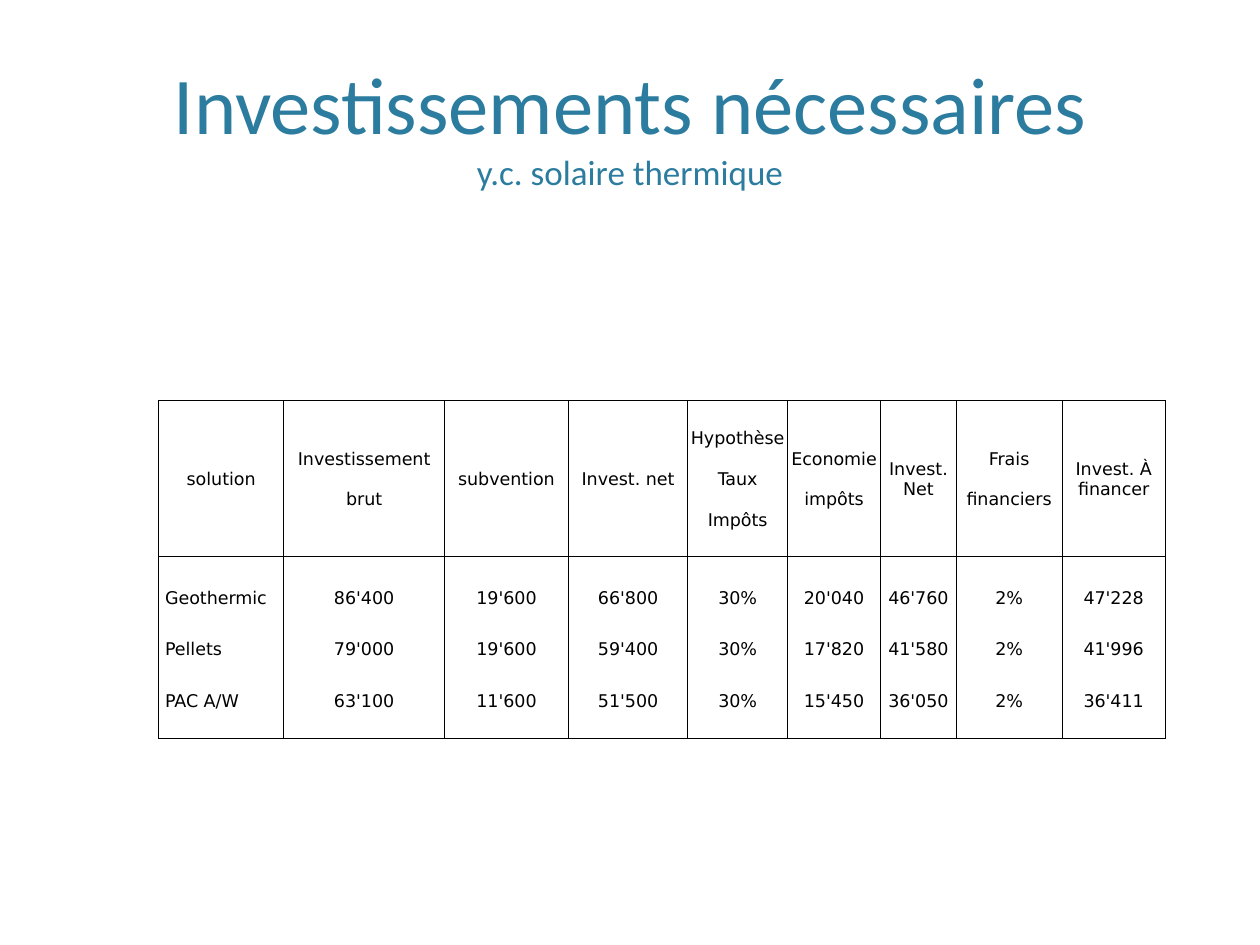
from dataclasses import dataclass

from lxml import etree
from pptx import Presentation
from pptx import util as u
from pptx.dml.color import RGBColor
from pptx.enum import text
from pptx.oxml.ns import qn

INK, TITLE_BLUE = "000000", "2C7C9F"
TABLE_FONT, TITLE_FONT = "DejaVu Sans", "Calibri"
TABLE_SIZE = 10
HEADER_GAP = 11.6  # one line of table text
BORDER_WIDTH = 0.5


@dataclass
class Column:
    width: float
    header: list[str]
    values: list[str]


COLUMNS = [
    Column(0.99, ["solution"], ["Geothermic", "Pellets", "PAC A/W"]),
    Column(1.28, ["Investissement", "brut"], ["86'400", "79'000", "63'100"]),
    Column(0.98, ["subvention"], ["19'600", "19'600", "11'600"]),
    Column(0.95, ["Invest. net"], ["66'800", "59'400", "51'500"]),
    Column(0.79, ["Hypothèse", "Taux", "Impôts"], ["30%"] * 3),
    Column(0.74, ["Economie", "impôts"], ["20'040", "17'820", "15'450"]),
    Column(0.6, ["Invest. Net"], ["46'760", "41'580", "36'050"]),
    Column(0.84, ["Frais", "financiers"], ["2%"] * 3),
    Column(0.82, ["Invest. À financer"], ["47'228", "41'996", "36'411"]),
]
ROW_HEIGHTS = [1.24, 0.41, 0.41, 0.41, 0.21]


def style_font(font, name: str, size: float, color: str) -> None:
    font.name = name
    font.size = u.Pt(size)
    font.color.rgb = RGBColor.from_string(color)


def set_borders(cell, visible: str) -> None:
    """Draw the sides named in visible (letters of LRTB) and clear the others."""
    properties = cell._tc.get_or_add_tcPr()
    for side in "LRTB":
        line = etree.SubElement(properties, qn(f"a:ln{side}"))
        if side in visible:
            line.set("w", str(u.Pt(BORDER_WIDTH)))
            fill = etree.SubElement(line, qn("a:solidFill"))
            etree.SubElement(fill, qn("a:srgbClr"), val=INK)
        else:
            etree.SubElement(line, qn("a:noFill"))


def fill_cell(cell, lines: list[str], align, anchor, left: float) -> None:
    cell.margin_left = u.Inches(left)
    cell.margin_right = cell.margin_top = u.Inches(0.01)
    cell.margin_bottom = 0
    cell.vertical_anchor = anchor
    cell.fill.background()
    frame = cell.text_frame
    for index, line in enumerate(lines):
        para = frame.add_paragraph() if index else frame.paragraphs[0]
        para.alignment = align
        if index:
            para.space_before = u.Pt(HEADER_GAP)
        span = para.add_run()
        span.text = line
        style_font(span.font, TABLE_FONT, TABLE_SIZE, INK)
    if not lines:
        # Keep the closing row low
        etree.SubElement(frame.paragraphs[0]._p, qn("a:endParaRPr"),
                         sz=str(TABLE_SIZE * 100))


def add_title(slide) -> None:
    title = slide.shapes.title
    title.left, title.top = u.Inches(0.6), u.Inches(0.12)
    title.width, title.height = u.Inches(8.8), u.Inches(1.46)
    frame = title.text_frame
    frame.word_wrap = True
    frame.auto_size = text.MSO_AUTO_SIZE.NONE
    frame.vertical_anchor = text.MSO_ANCHOR.BOTTOM
    para = frame.paragraphs[0]
    para.alignment = text.PP_ALIGN.CENTER
    for index, (words, size) in enumerate(
            [("Investissements nécessaires", 46), ("y.c. solaire thermique", 20)]):
        if index:
            para.add_line_break()
        span = para.add_run()
        span.text = words
        style_font(span.font, TITLE_FONT, size, TITLE_BLUE)


def add_investment_table(slide) -> None:
    last_row = len(ROW_HEIGHTS) - 1
    table = slide.shapes.add_table(
        len(ROW_HEIGHTS), len(COLUMNS), u.Inches(1.26), u.Inches(3.18),
        u.Inches(sum(column.width for column in COLUMNS)),
        u.Inches(sum(ROW_HEIGHTS))).table
    table.first_row = table.horz_banding = False
    for row, height in zip(table.rows, ROW_HEIGHTS):
        row.height = u.Inches(height)

    for col, column in enumerate(COLUMNS):
        table.columns[col].width = u.Inches(column.width)
        contents = [column.header, *([value] for value in column.values), []]
        for row, lines in enumerate(contents):
            cell = table.cell(row, col)
            # The body is one framed block per column
            sides = {0: "LRTB", 1: "LRT", last_row: "LRB"}.get(row, "LR")
            set_borders(cell, sides)
            is_label = row > 0 and col == 0
            fill_cell(
                cell, lines,
                text.PP_ALIGN.LEFT if is_label else text.PP_ALIGN.CENTER,
                text.MSO_ANCHOR.BOTTOM if row else text.MSO_ANCHOR.MIDDLE,
                0.05 if is_label else 0.01)


def main() -> None:
    deck = Presentation()
    deck.slide_width, deck.slide_height = u.Inches(10), u.Inches(7.5)
    page = deck.slides.add_slide(deck.slide_layouts.get_by_name("Title Only"))
    add_title(page)
    add_investment_table(page)
    deck.save("out.pptx")


if __name__ == "__main__":
    main()
